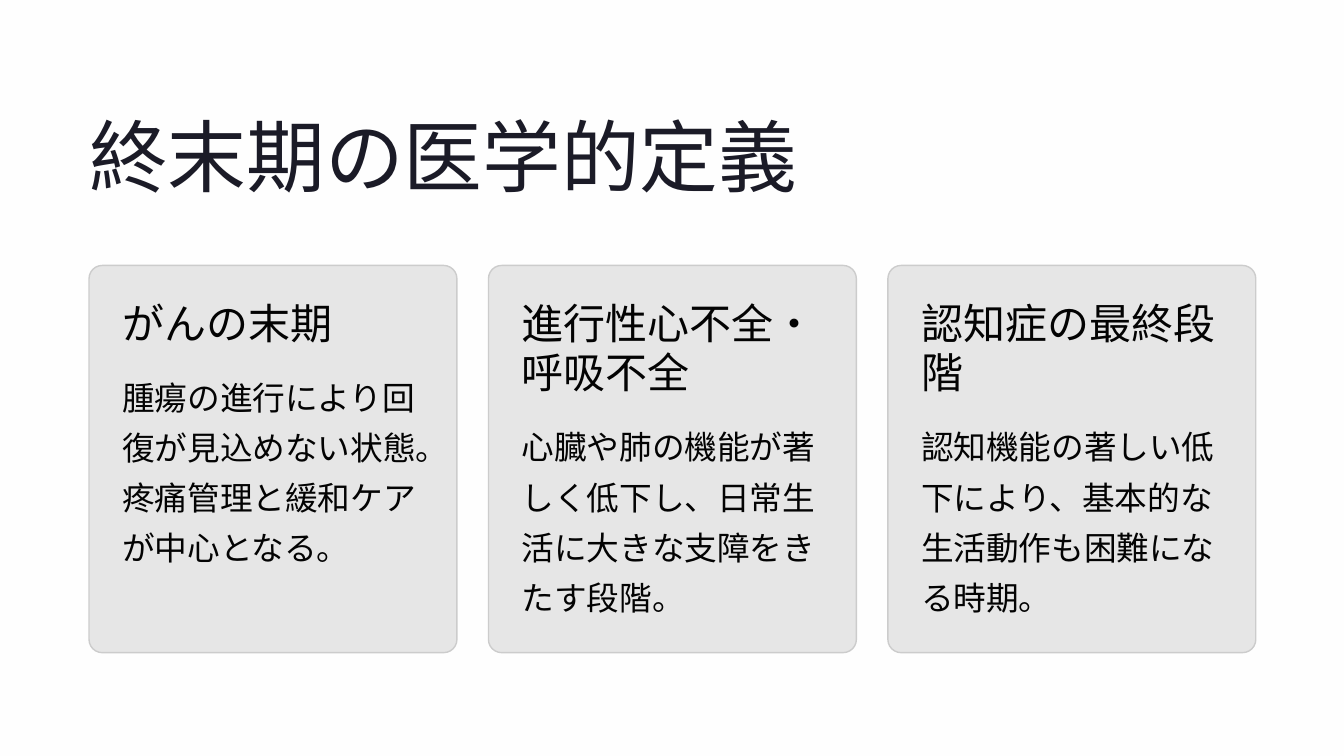
from pptx import Presentation
from pptx import util as u
from pptx.dml.color import RGBColor
from pptx.enum import shapes, text

COLORS = {"page": "FEFEFE", "title": "1B1B27", "card": "E6E6E6",
          "border": "CCCCCC", "text": "030303"}
CARDS = [
    ("がんの末期", 1, "腫瘍の進行により回復が見込めない状態。疼痛管理と緩和ケアが中心となる。"),
    ("進行性心不全・呼吸不全", 2, "心臓や肺の機能が著しく低下し、日常生活に大きな支障をきたす段階。"),
    ("認知症の最終段階", 2, "認知機能の著しい低下により、基本的な生活動作も困難になる時期。"),
]


def color(name):
    return RGBColor.from_string(COLORS[name])


def write(sp, content, *, size, leading, font="Inter", fill="text"):
    tf = sp.text_frame
    tf.margin_left = tf.margin_top = tf.margin_right = tf.margin_bottom = 0
    tf.word_wrap = True
    tf.auto_size = text.MSO_AUTO_SIZE.NONE
    tf.vertical_anchor = text.MSO_ANCHOR.TOP
    p = tf.paragraphs[0]
    p.alignment = text.PP_ALIGN.LEFT
    p.line_spacing = u.Pt(leading)
    r = p.add_run()
    r.text = content
    r.font.name, r.font.size = font, u.Pt(size)
    r.font.color.rgb = color(fill)


class CardSlide:
    """A titled slide whose cards stand in equal columns; lengths in inches."""
    left, width, gap, columns = 1.06, 13.89, 0.375, 3
    top, height = 3.16, 4.61
    pad, heading_line, heading_gap, body_height = 0.395, 0.59, 0.22, 2.41

    def __init__(self, prs):
        self.slide = prs.slides.add_slide(prs.slide_layouts[5])
        fill = self.slide.background.fill
        fill.solid()
        fill.fore_color.rgb = color("page")
        self.card_width = (self.width - (self.columns - 1) * self.gap) / self.columns

    def column(self, i):
        return self.left + i * (self.card_width + self.gap)

    def title(self, content):
        sp = self.slide.shapes.title
        sp.left, sp.top = u.Inches(self.left), u.Inches(1.23)
        sp.width, sp.height = u.Inches(self.width), u.Inches(1.18)
        write(sp, content, size=67.5, leading=84.5, fill="title")

    def panel(self, x):
        sp = self.slide.shapes.add_shape(
            shapes.MSO_SHAPE.ROUNDED_RECTANGLE,
            *map(u.Inches, (x, self.top, self.card_width, self.height)))
        sp.adjustments[0] = 0.036
        sp.shadow.inherit = False
        sp.fill.solid()
        sp.fill.fore_color.rgb = color("card")
        sp.line.color.rgb = color("border")
        sp.line.width = u.Pt(1.2)

    def label(self, x, y, height, content, **style):
        box = (x, y, self.card_width - 2 * self.pad, height)
        sp = self.slide.shapes.add_textbox(*map(u.Inches, box))
        write(sp, content, **style)

    def card(self, i, heading, lines, body):
        x = self.column(i)
        y = self.top + self.pad
        heading_height = lines * self.heading_line
        self.panel(x)
        self.label(x + self.pad, y, heading_height, heading, size=36, leading=42)
        self.label(x + self.pad, y + heading_height + self.heading_gap,
                   self.body_height, body, size=28, leading=43, font="Cabin")


def main():
    prs = Presentation()
    prs.slide_width, prs.slide_height = u.Inches(16), u.Inches(9)
    s = CardSlide(prs)
    s.title("終末期の医学的定義")
    for i, content in enumerate(CARDS):
        s.card(i, *content)
    prs.save("out.pptx")


if __name__ == "__main__":
    main()
